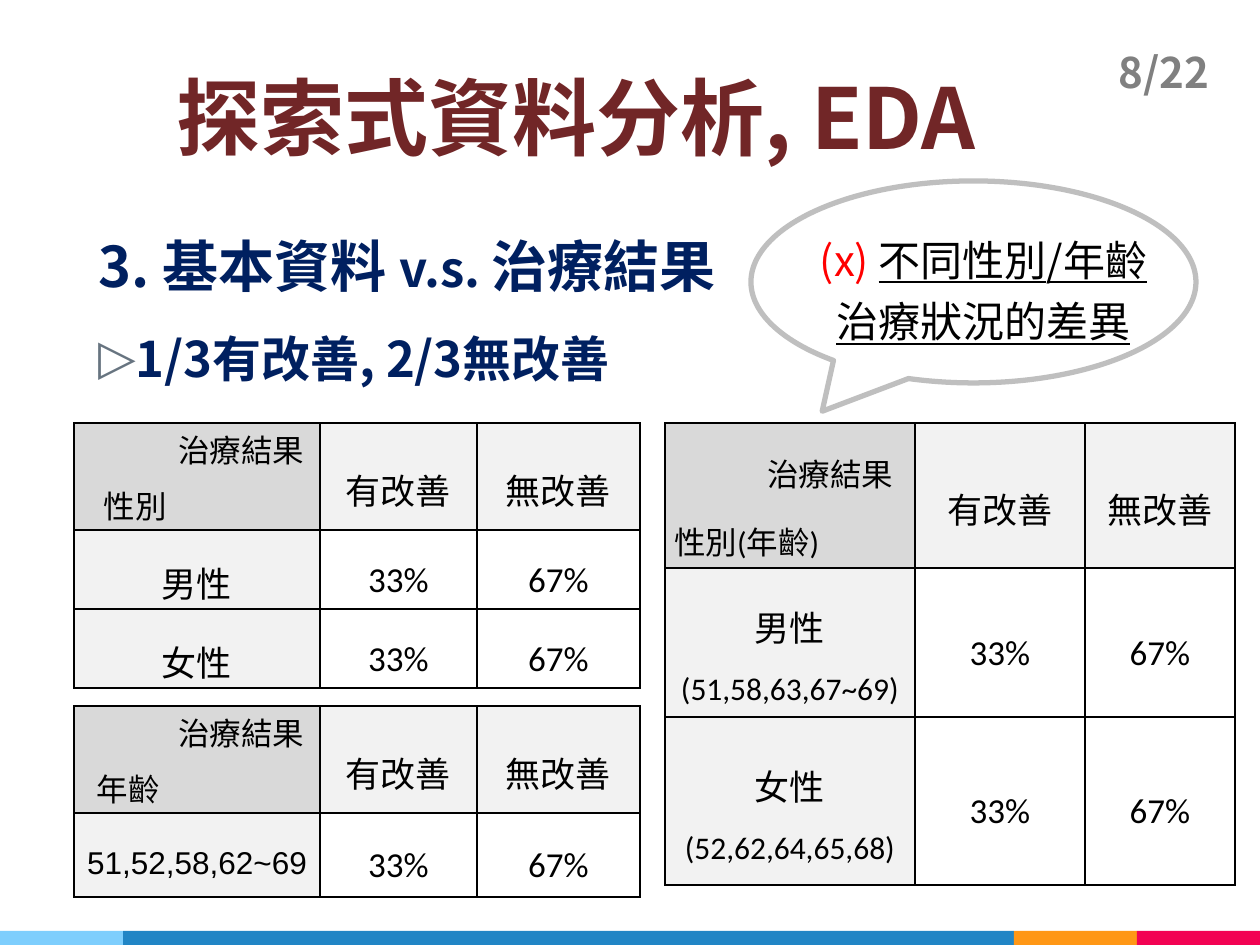
from lxml import etree
from pptx import Presentation
from pptx import util as u
from pptx.dml.color import RGBColor
from pptx.enum import shapes, text
from pptx.oxml.ns import qn

HUE = {
    "sky": "7ECEFD", "blue": "2185C5", "amber": "FF9715", "pink": "F20253",
    "navy": "002060", "wine": "712627", "slate": "677480", "grey": "808080",
    "line": "BFBFBF", "head": "D9D9D9", "pale": "F2F2F2",
    "black": "000000", "red": "FF0000",
}
SANS = "Noto Sans CJK SC"
ALIGN = text.PP_ALIGN


def px(n):
    """Turn pixels (126 to the inch) into EMU."""
    return u.Emu(round(n * 914400 / 126))


def style(font, size, hue, name=SANS, bold=False):
    font.size, font.name, font.bold = u.Pt(size), name, bold
    font.color.rgb = RGBColor.from_string(HUE[hue])


deck = Presentation()
deck.slide_width, deck.slide_height = px(1260), px(945)
slide = deck.slides.add_slide(deck.slide_layouts[6])

# Footer stripe
left = 0
for hue, wide in [("sky", 123), ("blue", 891), ("amber", 123), ("pink", 123)]:
    bar = slide.shapes.add_shape(
        shapes.MSO_SHAPE.RECTANGLE, px(left), px(931), px(wide), px(14))
    bar.shadow.inherit = False
    bar.fill.solid()
    bar.fill.fore_color.rgb = RGBColor.from_string(HUE[hue])
    bar.line.fill.background()
    left += wide

# Body
body = slide.shapes.add_textbox(px(54), px(185), px(1201), px(740)).text_frame
body.word_wrap = True
body.margin_left = body.margin_right = px(13)
body.margin_top = body.margin_bottom = px(13)
topic = body.paragraphs[0]
for part, size in [("3. 基本資料 ", 32), ("v.s. ", 28), ("治療結果", 32)]:
    run = topic.add_run()
    run.text = part
    style(run.font, size, "navy", bold=True)
point = body.add_paragraph()
point.text = "1/3有改善, 2/3無改善"
style(point.font, 28, "navy", bold=True)
for para, inset, hang in [(topic, 31, 0), (point, 63, -32)]:
    para.line_spacing = 1.5
    prop = para._p.get_or_add_pPr()
    prop.set("marL", str(px(inset)))
    prop.set("indent", str(px(hang)))
# Bullet, which has to come before the paragraph's default run properties
bullet = [etree.Element(qn(tag)) for tag in ("a:buClr", "a:buFont", "a:buChar")]
etree.SubElement(bullet[0], qn("a:srgbClr"), val=HUE["slate"])
bullet[1].set("typeface", "Arial")
bullet[2].set("char", "▷")
base = prop.find(qn("a:defRPr"))
for item in bullet:
    if base is None:
        prop.append(item)
    else:
        base.addprevious(item)

# Title
title = slide.shapes.add_textbox(px(164), px(16), px(1002), px(163)).text_frame
title.word_wrap = True
title.vertical_anchor = text.MSO_ANCHOR.BOTTOM
title.margin_left = title.margin_right = px(13)
title.margin_top = title.margin_bottom = px(13)
title.paragraphs[0].text = "探索式資料分析, EDA"
style(title.paragraphs[0].font, 48, "wine", bold=True)

# Tables: place, columns, rows, header (label, inset, right margin, spacing),
# then one (name, note) pair for each data row
TABLES = [
    ((74, 423), (246, 157, 163), (107, 79, 79), ("性別", 21, 16, 1.0),
     [("男性", ""), ("女性", "")]),
    ((74, 706), (246, 157, 163), (107, 84), ("年齡", 14, 16, 1.0),
     [("", "51,52,58,62~69")]),
    ((665, 423), (250, 170, 150), (145, 149, 168), ("性別(年齡)", 0, 22, 1.5),
     [("男性", "(51,58,63,67~69)"), ("女性", "(52,62,64,65,68)")]),
]
for (x, y), cols, rows, (label, inset, edge, gap), names in TABLES:
    table = slide.shapes.add_table(
        len(rows), len(cols), px(x), px(y), px(sum(cols)), px(sum(rows))).table
    for col, wide in zip(table.columns, cols):
        col.width = px(wide)
    for row, high in zip(table.rows, rows):
        row.height = px(high)

    grid = [[None, "有改善", "無改善"]] + [[name, "33%", "67%"] for name in names]
    for r, line in enumerate(grid):
        for c, value in enumerate(line):
            cell = table.cell(r, c)
            cell.vertical_anchor = text.MSO_ANCHOR.MIDDLE
            cell.margin_left = cell.margin_right = px(9)
            cell.margin_top = cell.margin_bottom = 0
            for side in ("a:lnL", "a:lnR", "a:lnT", "a:lnB"):
                edging = etree.SubElement(
                    cell._tc.get_or_add_tcPr(), qn(side), w=str(u.Pt(1)))
                paint = etree.SubElement(edging, qn("a:solidFill"))
                etree.SubElement(paint, qn("a:srgbClr"), val=HUE["black"])
            if r and c:
                cell.fill.background()
            else:
                cell.fill.solid()
                hue = "pale" if r or c else "head"
                cell.fill.fore_color.rgb = RGBColor.from_string(HUE[hue])

            para = cell.text_frame.paragraphs[0]
            para.space_before = u.Pt(6)
            if value is None:
                cell.margin_right = px(edge)
                para.text = "治療結果"
                para.alignment = ALIGN.RIGHT
                below = cell.text_frame.add_paragraph()
                below.text = label
                below.space_before = u.Pt(6 if gap == 1 else 0)
                below._p.get_or_add_pPr().set("marL", str(px(inset)))
                for part in (para, below):
                    part.line_spacing = gap
                    style(part.font, 18, "black", "Calibri")
                continue
            para.alignment = ALIGN.CENTER
            para.line_spacing = 1.5
            name, note = (value, "") if c else value
            face = "Calibri" if name else "Arial"
            for part, size in [(name, 20), (note, 18)]:
                if part:
                    run = para.add_run()
                    run.text = part
                    style(run.font, size, "black", face)

# Callout
group = slide.shapes.add_group_shape()
note = group.shapes.add_textbox(px(775), px(217), px(417), px(131)).text_frame
note.word_wrap = True
first, second = note.paragraphs[0], note.add_paragraph()
for para, part, hue in [(first, "(x) ", "red"), (first, "不同性別/年齡", "black"),
                        (second, "治療狀況的差異", "black")]:
    para.alignment = ALIGN.CENTER
    para.line_spacing = u.Pt(35)
    run = para.add_run()
    run.text = part
    style(run.font, 24, hue)
    run.font.underline = hue == "black"
bubble = group.shapes.add_shape(
    shapes.MSO_SHAPE.OVAL_CALLOUT, px(751), px(181), px(445), px(202))
bubble.adjustments[0], bubble.adjustments[1] = -0.34, 0.64
bubble.shadow.inherit = False
bubble.fill.background()
bubble.line.color.rgb = RGBColor.from_string(HUE["line"])
bubble.line.width = u.Pt(3)

# Page count
page = slide.shapes.add_textbox(px(1106), px(40), px(129), px(63)).text_frame
page.word_wrap = True
page.paragraphs[0].text = "8/22"
style(page.paragraphs[0].font, 24, "grey", bold=True)

deck.save("out.pptx")
